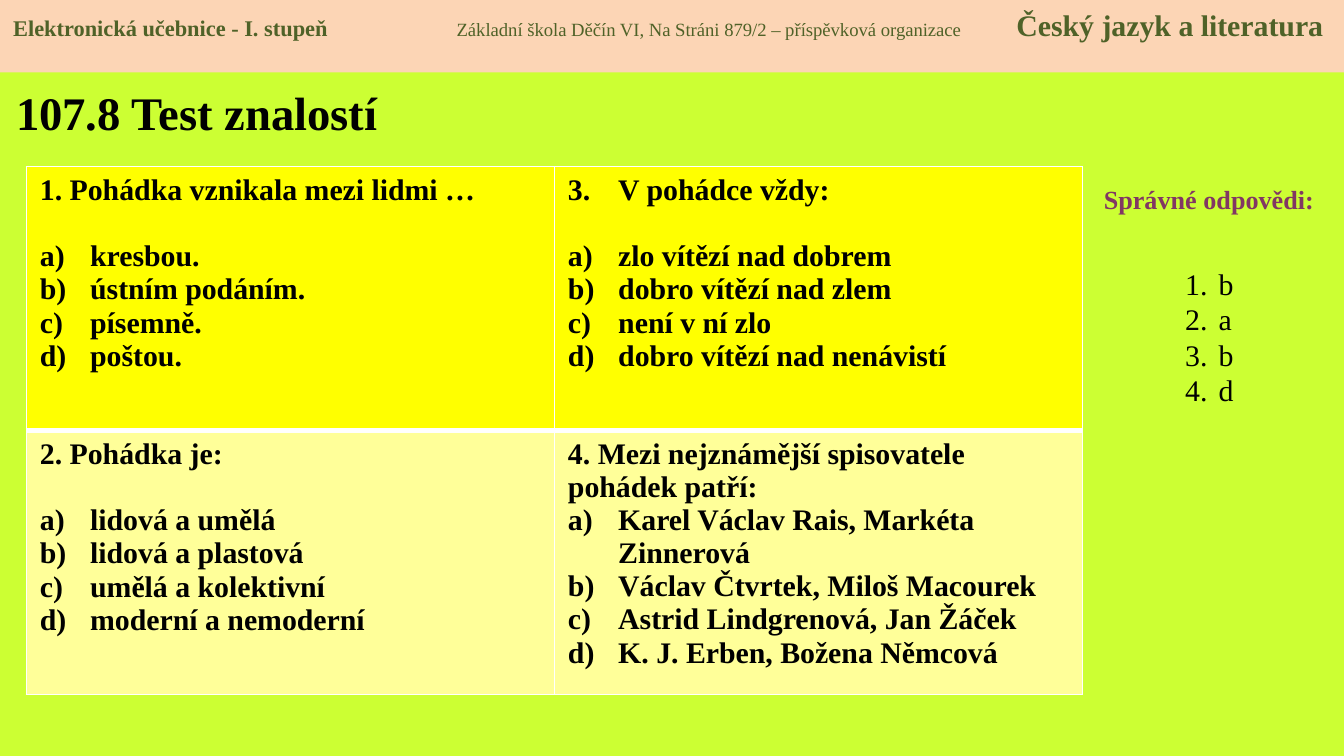
from dataclasses import dataclass

from pptx import Presentation
from pptx.dml.color import RGBColor
from pptx.enum.shapes import MSO_SHAPE
from pptx.enum.text import MSO_ANCHOR, MSO_AUTO_SIZE, PP_ALIGN
from pptx.oxml.ns import qn
from pptx.util import Cm, Pt
from lxml.etree import SubElement


@dataclass(frozen=True)
class Theme:
    font: str = "Times New Roman"
    background: str = "CCFF33"
    band: str = "FCD5B5"
    band_text: str = "4F6228"
    text: str = "000000"
    accent: str = "813763"
    border: str = "FFFFFF"
    row_fills: tuple = ("FFFF00", "FFFF99")
    title_size: int = 25
    large_size: int = 16
    label_size: int = 14
    band_size: int = 12
    small_size: int = 10


THEME = Theme()
LETTERS, NUMBERS = "alphaLcParenR", "arabicPeriod"
BLANK_LINE = 18

# Each question: text, start number of an automatic list (or None), gap after it, options
QUESTIONS = [
    [
        ("1. Pohádka vznikala mezi lidmi …", None, BLANK_LINE,
         ["kresbou.", "ústním podáním.", "písemně.", "poštou."]),
        ("V pohádce vždy:", 3, BLANK_LINE,
         ["zlo vítězí nad dobrem", "dobro vítězí nad zlem",
          "není v ní zlo", "dobro vítězí nad nenávistí"]),
    ],
    [
        ("2. Pohádka je:", None, BLANK_LINE,
         ["lidová a umělá", "lidová a plastová",
          "umělá a kolektivní", "moderní a nemoderní"]),
        ("4. Mezi nejznámější spisovatele pohádek patří:", None, 0,
         ["Karel Václav Rais, Markéta Zinnerová", "Václav Čtvrtek, Miloš Macourek",
          "Astrid Lindgrenová, Jan Žáček", "K. J. Erben, Božena Němcová"]),
    ],
]


def color(value):
    return RGBColor.from_string(value)


def add_run(paragraph, text, size, fill=THEME.text, bold=False):
    run = paragraph.add_run()
    run.text = text
    font = run.font
    font.name, font.size, font.bold = THEME.font, Pt(size), bold
    font.color.rgb = color(fill)


def next_paragraph(frame):
    """Return the empty first paragraph, or a new one after existing text."""
    first = frame.paragraphs[0]
    return frame.add_paragraph() if first.runs else first


def number_paragraph(paragraph, scheme, indent, start=1):
    properties = paragraph._p.get_or_add_pPr()
    properties.set("marL", str(indent))
    properties.set("indent", str(-indent))
    number = SubElement(properties, qn("a:buAutoNum"), type=scheme)
    if start > 1:
        number.set("startAt", str(start))


def add_tab_stops(paragraph, positions):
    tabs = SubElement(paragraph._p.get_or_add_pPr(), qn("a:tabLst"))
    for position in positions:
        SubElement(tabs, qn("a:tab"), pos=str(position), algn="l")


def set_title(slide, text):
    title = slide.shapes.title
    title.left, title.top, title.width, title.height = Cm(0.05), Cm(1.37), Cm(16.03), Cm(2.39)
    frame = title.text_frame
    frame.auto_size = MSO_AUTO_SIZE.NONE
    frame.vertical_anchor = MSO_ANCHOR.TOP
    frame.margin_top = Cm(0.22)
    paragraph = frame.paragraphs[0]
    paragraph.alignment = PP_ALIGN.LEFT
    add_run(paragraph, text, THEME.title_size, bold=True)


def add_header_band(slide, width):
    band = slide.shapes.add_shape(MSO_SHAPE.RECTANGLE, 0, 0, width, Cm(1.37))
    band.shadow.inherit = False
    band.fill.solid()
    band.fill.fore_color.rgb = color(THEME.band)
    band.line.fill.background()
    frame = band.text_frame
    frame.word_wrap = True
    frame.vertical_anchor = MSO_ANCHOR.TOP
    paragraph = frame.paragraphs[0]
    paragraph.alignment = PP_ALIGN.LEFT
    add_tab_stops(paragraph, [Cm(8.38), Cm(18.96)])
    for text, size, bold in [
        ("Elektronická učebnice - I. stupeň\t", THEME.band_size, True),
        ("Základní škola Děčín VI, Na Stráni 879/2 – příspěvková organizace\t",
         THEME.small_size, False),
        ("Český jazyk a literatura", THEME.large_size, True),
    ]:
        add_run(paragraph, text, size, THEME.band_text, bold)


def set_cell_borders(cell, widths):
    """Draw the borders given as a side-to-points mapping, in schema order."""
    properties = cell._tc.get_or_add_tcPr()
    for side, points in widths.items():
        line = SubElement(properties, qn(f"a:ln{side}"), w=str(Pt(points)))
        SubElement(SubElement(line, qn("a:solidFill")), qn("a:srgbClr"), val=THEME.border)


def fill_question(frame, question, start, gap, options):
    paragraph = next_paragraph(frame)
    if start:
        number_paragraph(paragraph, NUMBERS, Cm(0.95), start)
    paragraph.space_after = Pt(gap)
    add_run(paragraph, question, THEME.large_size, bold=True)
    for option in options:
        paragraph = next_paragraph(frame)
        number_paragraph(paragraph, LETTERS, Cm(0.95))
        add_run(paragraph, option, THEME.large_size, bold=True)


def add_question_table(slide):
    table = slide.shapes.add_table(2, 2, Cm(0.5), Cm(3.15), Cm(19.96), Cm(9.98)).table
    table.first_row = table.horz_banding = False
    for row, questions in enumerate(QUESTIONS):
        for column, question in enumerate(questions):
            cell = table.cell(row, column)
            set_cell_borders(cell, {"L": 1, "R": 1,
                                    "T": 3 if row == 1 else 1,
                                    "B": 3 if row == 0 else 1})
            cell.fill.solid()
            cell.fill.fore_color.rgb = color(THEME.row_fills[row])
            fill_question(cell.text_frame, *question)


def add_text_frame(slide, left, top, width, height):
    frame = slide.shapes.add_textbox(left, top, width, height).text_frame
    frame.word_wrap = True
    return frame


def add_answers(slide):
    heading = add_text_frame(slide, Cm(20.45), Cm(3.35), Cm(4.8), Cm(0.86)).paragraphs[0]
    heading.alignment = PP_ALIGN.CENTER
    add_run(heading, "Správné odpovědi:", THEME.label_size, THEME.accent, True)

    frame = add_text_frame(slide, Cm(22.15), Cm(4.19), Cm(1.4), Cm(5.05))
    frame.margin_top = Cm(0.84)
    frame.margin_right = 0
    for answer in "babd":
        paragraph = next_paragraph(frame)
        number_paragraph(paragraph, NUMBERS, Cm(0.63))
        paragraph.line_spacing = Pt(19)
        add_run(paragraph, answer, THEME.large_size)


def main():
    presentation = Presentation()
    presentation.slide_width, presentation.slide_height = Cm(25.4), Cm(14.29)
    slide = presentation.slides.add_slide(presentation.slide_layouts[5])
    slide.background.fill.solid()
    slide.background.fill.fore_color.rgb = color(THEME.background)
    set_title(slide, "107.8 Test znalostí")
    add_header_band(slide, presentation.slide_width)
    add_question_table(slide)
    add_answers(slide)
    presentation.save("out.pptx")


if __name__ == "__main__":
    main()
